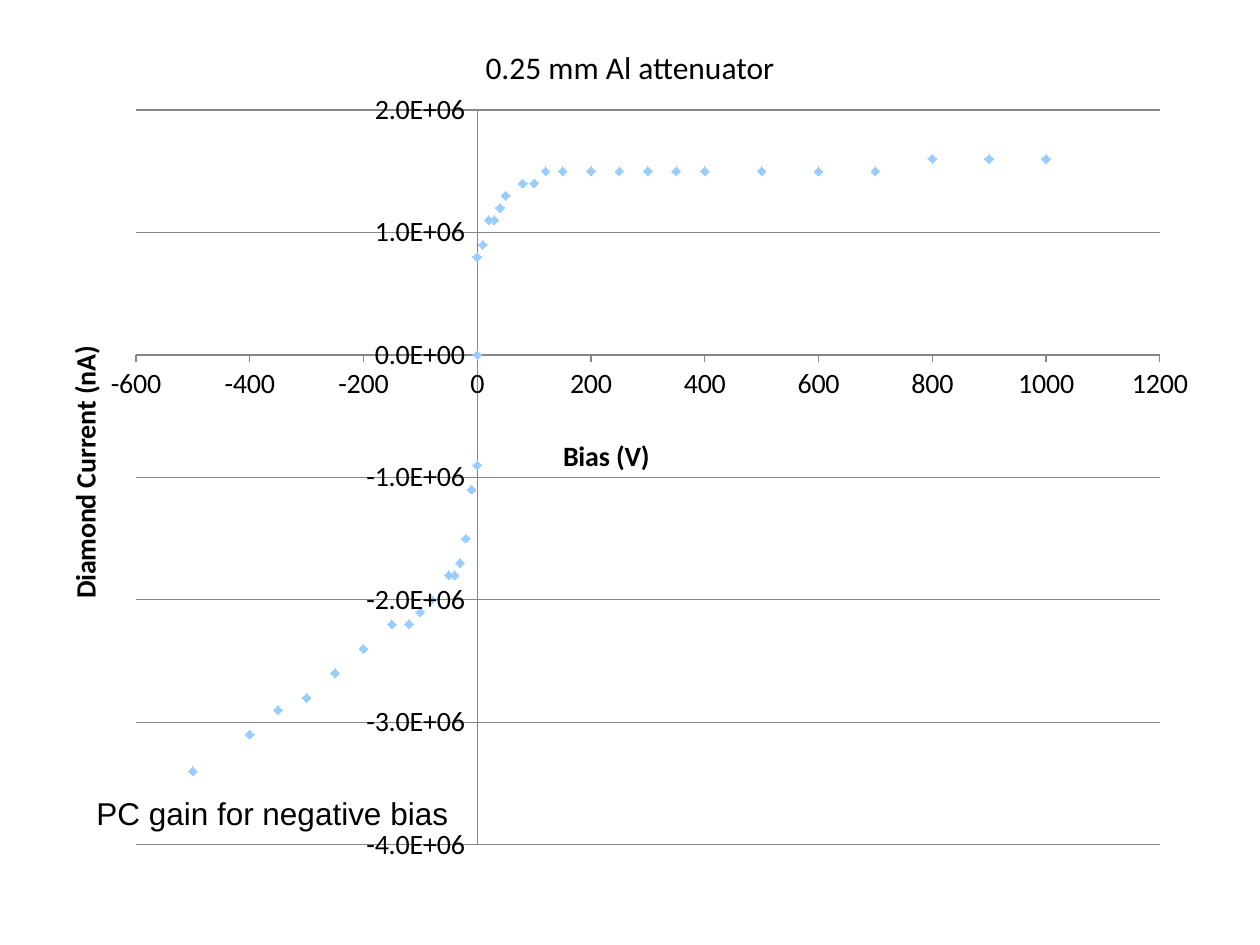
"""Build a slide with a scatter chart of diamond current against bias."""
from lxml import etree
from pptx import Presentation
from pptx import util as u
from pptx.chart.data import XyChartData
from pptx.dml.color import RGBColor
from pptx.enum import chart as ce
from pptx.enum import text as te
from pptx.oxml.ns import qn

TITLE = "0.25 mm Al attenuator"
NOTE = "PC gain for negative bias"
MICRO_POINTS = [
    (0, 0), (0, -0.9), (-10, -1.1), (-20, -1.5), (-30, -1.7), (-40, -1.8),
    (-50, -1.8), (-80, -2.0), (-100, -2.1), (-120, -2.2), (-150, -2.2),
    (-200, -2.4), (-250, -2.6), (-300, -2.8), (-350, -2.9), (-400, -3.1),
    (-500, -3.4),
    (0, 0), (0, 0.8), (10, 0.9), (20, 1.1), (30, 1.1), (40, 1.2),
    (50, 1.3), (80, 1.4), (100, 1.4), (120, 1.5), (150, 1.5),
    (200, 1.5), (250, 1.5), (300, 1.5), (350, 1.5), (400, 1.5),
    (500, 1.5), (600, 1.5), (700, 1.5), (800, 1.6), (900, 1.6),
    (1000, 1.6),
]
AXES = {
    "category_axis": dict(title="Bias (V)", low=-600, high=1200, step=200,
                          fmt="General", grid=False, corner=(505, 348), turn=0),
    "value_axis": dict(title="Diamond Current (nA)", low=-4e6, high=2e6, step=1e6,
                       fmt="0.0E+00", grid=True, corner=(8, 257), turn=-90),
}
CHART = (53, 84, 1155, 819)
PLOT = (83, 26, 1024, 735)
BLACK = RGBColor(0, 0, 0)
GRAY = RGBColor(0x86, 0x86, 0x86)
BLUE = RGBColor(0x99, 0xCC, 0xFF)


def px(*lengths):
    return [u.Emu(round(length * 914400 / 126)) for length in lengths]


def place(parent, index, lengths, inner=False):
    for old in parent.findall(qn("c:layout")):
        parent.remove(old)
    layout = etree.Element(qn("c:layout"))
    parent.insert(index, layout)
    manual = etree.SubElement(layout, qn("c:manualLayout"))
    settings = [("layoutTarget", "inner")] if inner else []
    settings += [("xMode", "edge"), ("yMode", "edge")]
    shares = [length / whole for length, whole in zip(lengths, CHART[2:] * 2)]
    settings += zip("xywh", shares)
    for tag, value in settings:
        etree.SubElement(manual, qn("c:" + tag)).set("val", str(value))


def style(font, name, size, bold=False):
    font.name, font.size, font.bold = name, u.Pt(size), bold
    font.color.rgb = BLACK


def write(box, words, name, align):
    frame = box.text_frame
    frame.text = words
    frame.vertical_anchor = te.MSO_ANCHOR.TOP
    para = frame.paragraphs[0]
    para.alignment = align
    style(para.runs[0].font, name, 18)
    return frame


def format_axis(axis, title, low, high, step, fmt, grid, corner, turn):
    axis.minimum_scale, axis.maximum_scale, axis.major_unit = low, high, step
    axis.major_tick_mark = ce.XL_TICK_MARK.OUTSIDE
    axis.minor_tick_mark = ce.XL_TICK_MARK.NONE
    axis.tick_label_position = ce.XL_TICK_LABEL_POSITION.NEXT_TO_AXIS
    axis.tick_labels.number_format = fmt
    axis.tick_labels.number_format_is_linked = False
    axis.format.line.color.rgb = GRAY
    axis.has_major_gridlines = grid
    if grid:
        axis.major_gridlines.format.line.color.rgb = GRAY
    frame = axis.axis_title.text_frame
    frame.text = title
    style(frame.paragraphs[0].runs[0].font, "Calibri", 16, True)
    heading = axis.axis_title.element
    heading.find(".//" + qn("a:bodyPr")).set("rot", str(turn * 60000))
    place(heading, 1, corner)


def add_current_chart(page):
    points = XyChartData()
    series = points.add_series("Series 1")
    for bias, current in MICRO_POINTS:
        series.add_data_point(bias, round(current * 1e6))
    chart = page.shapes.add_chart(ce.XL_CHART_TYPE.XY_SCATTER,
                                  *px(*CHART), points).chart
    chart.has_title = chart.has_legend = False
    style(chart.font, "Calibri", 16)
    plot = chart.plots[0]
    plot.vary_by_categories = False
    dots = plot.series[0]
    dots.smooth = False
    dots.format.line.fill.background()
    dots.marker.style, dots.marker.size = ce.XL_MARKER_STYLE.DIAMOND, 5
    dots.marker.format.fill.solid()
    dots.marker.format.fill.fore_color.rgb = BLUE
    dots.marker.format.line.fill.background()
    for name, settings in AXES.items():
        format_axis(getattr(chart, name), **settings)
    place(chart.element.find(".//" + qn("c:plotArea")), 0, PLOT, inner=True)


def main():
    deck = Presentation()
    deck.slide_width, deck.slide_height = px(1260, 945)
    page = deck.slides.add_slide(deck.slide_layouts[5])
    add_current_chart(page)
    note = page.shapes.add_textbox(*px(84, 788, 381, 50))
    frame = write(note, NOTE, "Arial", te.PP_ALIGN.LEFT)
    frame.word_wrap = False
    title = page.shapes.title
    title.left, title.top, title.width, title.height = px(0, 42, 1260, 50)
    write(title, TITLE, "Calibri", te.PP_ALIGN.CENTER).word_wrap = True
    deck.save("out.pptx")


if __name__ == "__main__":
    main()
